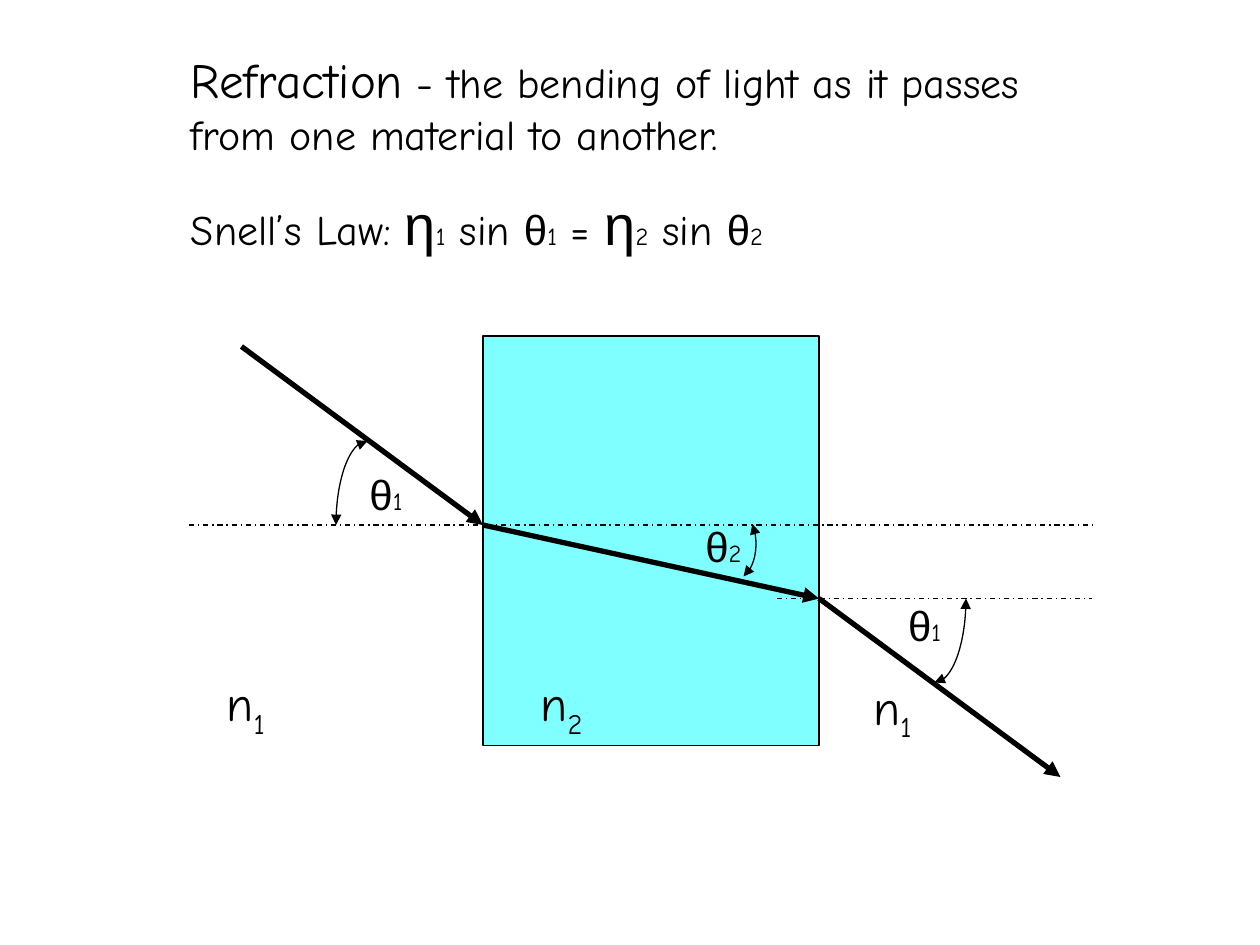
from math import cos, radians, sin

from lxml import etree
from pptx import Presentation
from pptx.dml.color import RGBColor
from pptx.enum.dml import MSO_LINE
from pptx.enum.shapes import MSO_CONNECTOR, MSO_SHAPE
from pptx.enum.text import MSO_AUTO_SIZE
from pptx.oxml.ns import qn
from pptx.util import Emu, Pt

PX = 914400 // 120
STRAIGHT = MSO_CONNECTOR.STRAIGHT
RECTANGLE = MSO_SHAPE.RECTANGLE
DASH_DOT = MSO_LINE.DASH_DOT
FIT = MSO_AUTO_SIZE.SHAPE_TO_FIT_TEXT
BLACK, CYAN = "000000", "00FFFF"
LATIN, GREEK = "Comic Neue", "Arial"


def px(n):
    """Turn pixels into EMU."""
    return Emu(round(n * PX))


def rgb(value):
    """Turn a hex string into a colour."""
    return RGBColor.from_string(value)


def style_line(shape, width, *ends):
    """Draw a black line with triangles at the named ends."""
    shape.line.color.rgb = rgb(BLACK)
    shape.line.width = Pt(width)
    ln = shape.line._get_or_add_ln()
    for end in ends:
        etree.SubElement(ln, qn(f"a:{end}"), type="triangle")


def add_line(s, x1, y1, x2, y2, width, *ends):
    """Add a straight line without shadow."""
    line = s.shapes.add_connector(STRAIGHT, px(x1), px(y1), px(x2), px(y2))
    style_line(line, width, *ends)
    etree.SubElement(line._element.spPr, qn("a:effectLst"))
    return line


def add_arc(s, cx, cy, rx, ry, start, end):
    """Add an elliptical arc with an arrowhead at each end."""
    steps = 24
    angles = [radians(start + (end - start) * i / steps) for i in range(steps + 1)]
    points = [(px(cx + rx * cos(a)), px(cy + ry * sin(a))) for a in angles]
    builder = s.shapes.build_freeform(*points[0])
    builder.add_line_segments(points[1:], close=False)
    arc = builder.convert_to_shape()
    arc.fill.background()
    arc.shadow.inherit = False
    style_line(arc, 0.75, "headEnd", "tailEnd")


def add_run(p, text, size, font=LATIN, baseline=0):
    """Add one formatted run."""
    r = p.add_run()
    r.text = text
    r.font.size = Pt(size)
    r.font.name = font
    r.font.color.rgb = rgb(BLACK)
    if baseline:
        r._r.get_or_add_rPr().set("baseline", str(baseline * 1000))


def add_text(s, x, y, w, h, wrap):
    """Add a text box and return its text frame."""
    tf = s.shapes.add_textbox(px(x), px(y), px(w), px(h)).text_frame
    tf.word_wrap = wrap
    tf.auto_size = FIT
    return tf


def add_angle(s, x, y, w, h, index):
    """Label an angle."""
    p = add_text(s, x, y, w, h, False).paragraphs[0]
    add_run(p, "θ", 24, GREEK)
    add_run(p, index, 14)


def add_medium(s, x, y, w, h, index):
    """Label a medium with its refractive index."""
    p = add_text(s, x, y, w, h, False).paragraphs[0]
    add_run(p, "n", 28)
    add_run(p, index, 28, baseline=-25)


def add_definition(s, x, y, w, h):
    """Write the definition and Snell's law."""
    tf = add_text(s, x, y, w, h, True)
    p = tf.paragraphs[0]
    add_run(p, "Refraction", 28)
    add_run(p, " - the bending of light as it passes from one material to another.", 24)
    p = tf.add_paragraph()
    p.space_before = Pt(18)
    for lead, index in (("Snell’s Law: ", "1"), (" = ", "2")):
        add_run(p, lead, 24)
        add_run(p, "η", 32, GREEK)
        add_run(p, index, 14)
        add_run(p, " sin ", 24)
        add_run(p, "θ", 24, GREEK)
        add_run(p, index, 14)


def add_diagram(s, x, y, w, h):
    """Draw a ray refracted by a slab, with normals, angles and media."""
    slab = s.shapes.add_shape(RECTANGLE, px(x + 280), px(y), px(320), px(h - 30))
    slab.shadow.inherit = False
    slab.fill.solid()
    slab.fill.fore_color.rgb = rgb(CYAN)
    colour = slab._element.spPr.find(".//" + qn("a:srgbClr"))
    etree.SubElement(colour, qn("a:alpha"), val="50000")
    style_line(slab, 0.75)

    for left, top in ((0, 180), (560, 250)):
        normal = add_line(s, x + left, y + top, x + w, y + top, 0.75)
        normal.line.dash_style = DASH_DOT

    ray = [(50, 10), (280, 180), (600, 250), (830, h)]
    for (x1, y1), (x2, y2) in zip(ray, ray[1:]):
        add_line(s, x + x1, y + y1, x + x2, y + y2, 3, "tailEnd")

    for cx, cy, rx, ry, start, end in (
        (170, 180, 30, 80, 270, 180),
        (520, 198, 20, 34, -34, 66),
        (710, 250, 30, 80, 90, 0),
    ):
        add_arc(s, x + cx, y + cy, rx, ry, start, end)

    for left, top, width, index in (
        (160, 120, 56, "1"), (480, 170, 60, "2"), (673, 245, 56, "1"),
    ):
        add_angle(s, x + left, y + top, width, 60, index)
    for left, top, width, index in (
        (24, 315, 62, "1"), (323, 315, 68, "2"), (640, 318, 62, "1"),
    ):
        add_medium(s, x + left, y + top, width, 68, index)


def main():
    """Build and save the slide."""
    prs = Presentation()
    prs.slide_width, prs.slide_height = px(1200), px(900)
    s = prs.slides.add_slide(prs.slide_layouts[6])
    add_diagram(s, 180, 320, 860, 420)
    add_definition(s, 170, 41, 860, 368)
    prs.save("out.pptx")


if __name__ == "__main__":
    main()
